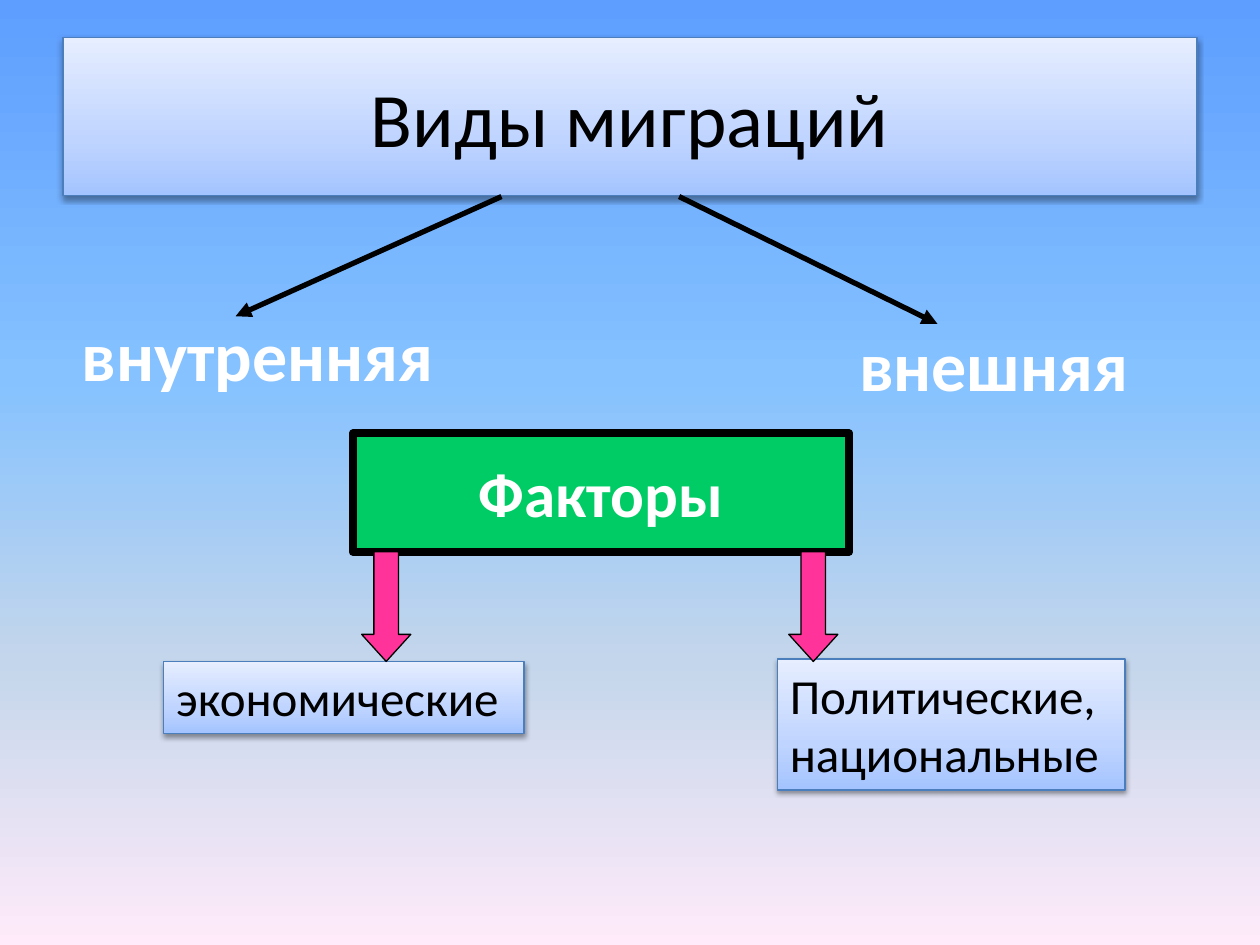
from dataclasses import dataclass

from lxml import etree
from pptx import Presentation
from pptx.dml.color import RGBColor
from pptx.enum.shapes import MSO_CONNECTOR, MSO_SHAPE
from pptx.enum.text import MSO_ANCHOR, MSO_AUTO_SIZE, PP_ALIGN
from pptx.oxml.ns import qn
from pptx.util import Inches, Pt

RECTANGLE = MSO_SHAPE.RECTANGLE
DOWN_ARROW = MSO_SHAPE.DOWN_ARROW
STRAIGHT = MSO_CONNECTOR.STRAIGHT
MIDDLE, TOP = MSO_ANCHOR.MIDDLE, MSO_ANCHOR.TOP
CENTER, LEFT = PP_ALIGN.CENTER, PP_ALIGN.LEFT
GROW = MSO_AUTO_SIZE.SHAPE_TO_FIT_TEXT
TITLE_ONLY = 5


@dataclass(frozen=True)
class Theme:
    font: str = "Calibri"
    dark: str = "000000"
    light: str = "FFFFFF"
    edge: str = "4B7EBC"
    green: str = "00CC66"
    pink: str = "FF3399"
    sky: tuple = ((0, "5E9EFF"), (40, "85C2FF"), (70, "C4D6EB"), (100, "FFEBFA"))
    panel: tuple = ((0, "A4C4FF"), (35, "BFD4FF"), (100, "E6EEFF"))
    title_size: int = 44
    kind_size: int = 40
    heading_size: int = 36
    factor_size: int = 28
    thin: float = 0.75
    medium: float = 3
    thick: float = 4.5


THEME = Theme()


def add_element(parent, tag, **attributes):
    return etree.SubElement(parent, qn(tag), {key: str(value) for key, value in attributes.items()})


def paint_gradient(fill, properties, stops, angle):
    fill.solid()
    solid = properties.find(qn("a:solidFill"))
    gradient = etree.Element(qn("a:gradFill"), rotWithShape="1")
    stop_list = add_element(gradient, "a:gsLst")
    for position, color in stops:
        stop = add_element(stop_list, "a:gs", pos=position * 1000)
        add_element(stop, "a:srgbClr", val=color)
    add_element(gradient, "a:lin", ang=angle * 60000, scaled=0)
    properties.replace(solid, gradient)


def set_line(line, color, width):
    line.color.rgb = RGBColor.from_string(color)
    line.width = Pt(width)


def style_solid(shape, color, width):
    shape.shadow.inherit = False
    shape.fill.solid()
    shape.fill.fore_color.rgb = RGBColor.from_string(color)
    set_line(shape.line, THEME.dark, width)


def style_panel(shape):
    properties = shape._element.spPr
    paint_gradient(shape.fill, properties, THEME.panel, 270)
    set_line(shape.line, THEME.edge, THEME.thin)
    shape.shadow.inherit = False
    effects = properties.find(qn("a:effectLst"))
    shadow = add_element(effects, "a:outerShdw", blurRad=Pt(3.1), dist=Pt(1.6),
                         dir=90 * 60000, rotWithShape=0)
    color = add_element(shadow, "a:srgbClr", val=THEME.dark)
    add_element(color, "a:alpha", val=38000)


def write_text(shape, lines, size, color, bold=False, align=LEFT, anchor=TOP, wrap=False):
    frame = shape.text_frame
    frame.word_wrap = wrap
    frame.vertical_anchor = anchor
    for index, line in enumerate(lines):
        para = frame.paragraphs[0] if index == 0 else frame.add_paragraph()
        para.alignment = align
        span = para.add_run()
        span.text = line
        span.font.name = THEME.font
        span.font.size = Pt(size)
        span.font.bold = bold
        span.font.color.rgb = RGBColor.from_string(color)


def place_title(page, box, text):
    title = page.shapes.title
    title.left, title.top, title.width, title.height = map(Inches, box)
    style_panel(title)
    write_text(title, [text], THEME.title_size, THEME.dark,
               align=CENTER, anchor=MIDDLE, wrap=True)


def add_kind(page, box, text, start, end):
    arrow = page.shapes.add_connector(STRAIGHT, *map(Inches, start + end))
    set_line(arrow.line, THEME.dark, THEME.medium)
    add_element(arrow.line._get_or_add_ln(), "a:tailEnd", type="triangle")
    add_element(arrow._element.spPr, "a:effectLst")
    label = page.shapes.add_textbox(*map(Inches, box))
    write_text(label, [text], THEME.kind_size, THEME.light, bold=True)
    label.text_frame.auto_size = GROW


def add_heading(page, box, text):
    heading = page.shapes.add_shape(RECTANGLE, *map(Inches, box))
    style_solid(heading, THEME.green, THEME.thick)
    write_text(heading, [text], THEME.heading_size, THEME.light,
               bold=True, align=CENTER, anchor=MIDDLE)


def add_factor(page, box, lines):
    factor = page.shapes.add_shape(RECTANGLE, *map(Inches, box))
    style_panel(factor)
    write_text(factor, lines, THEME.factor_size, THEME.dark)
    factor.text_frame.auto_size = GROW


def add_down_arrow(page, box):
    arrow = page.shapes.add_shape(DOWN_ARROW, *map(Inches, box))
    arrow.adjustments[0] = 0.5
    arrow.adjustments[1] = 0.55
    style_solid(arrow, THEME.pink, THEME.thin)


def build_migration_page(deck):
    page = deck.slides.add_slide(deck.slide_layouts[TITLE_ONLY])
    fill = page.background.fill
    fill.solid()
    paint_gradient(fill, page.element.xpath("p:cSld/p:bg/p:bgPr")[0], THEME.sky, 90)

    place_title(page, (0.5, 0.3, 9, 1.25), "Виды миграций")
    add_kind(page, (0.55, 2.42, 3.03, 0.77), "внутренняя", (3.98, 1.56), (1.87, 2.51))
    add_kind(page, (6.72, 2.5, 2.36, 0.77), "внешняя", (5.39, 1.56), (7.44, 2.57))
    add_heading(page, (2.8, 3.44, 3.94, 0.94), "Факторы")
    add_factor(page, (1.3, 5.25, 2.86, 0.57), ["экономические"])
    add_factor(page, (6.17, 5.23, 2.76, 1.04), ["Политические,", "национальные"])
    for left in (2.87, 6.26):
        add_down_arrow(page, (left, 4.38, 0.39, 0.87))


def main():
    deck = Presentation()
    deck.slide_width, deck.slide_height = Inches(10), Inches(7.5)
    build_migration_page(deck)
    deck.save("out.pptx")


if __name__ == "__main__":
    main()
